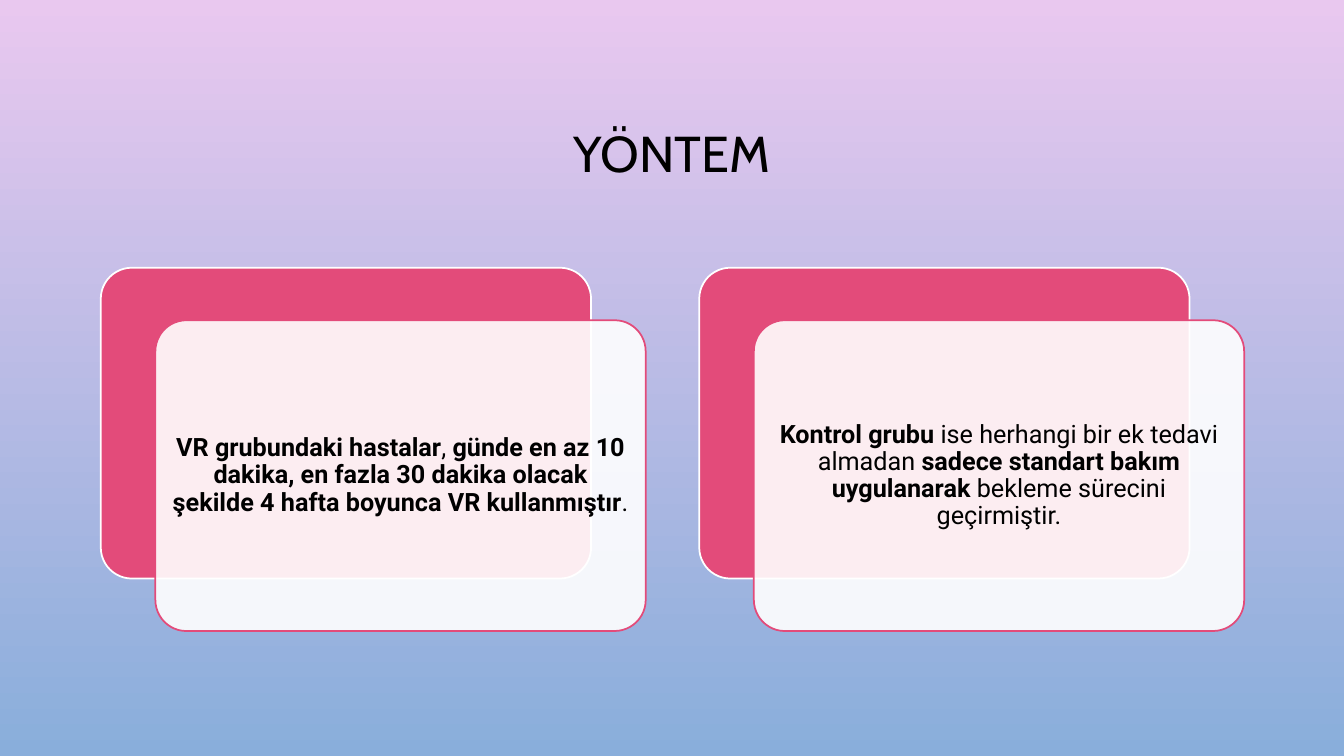
from dataclasses import dataclass

from lxml.etree import SubElement
from pptx import Presentation
from pptx.dml.color import RGBColor
from pptx.enum.shapes import MSO_SHAPE as Preset
from pptx.enum.text import MSO_ANCHOR as Anchor, PP_ALIGN as Align
from pptx.oxml.ns import qn
from pptx.slide import Slide
from pptx.util import Emu, Pt

EMU_PER_PX = 9525
COLORS = {
    "sky_top": "E9C8EF",
    "sky_bottom": "89AEDB",
    "rose": "E34B7A",
    "white": "FFFFFF",
    "ink": "000000",
}
CARD_LEFT, CARD_TOP, CARD_STEP = 96, 255, 570
CARD_WIDTH, CARD_HEIGHT = 467, 296
FRONT_SHIFT_X, FRONT_SHIFT_Y = 52, 50
TEXT_INSET = 9


@dataclass(frozen=True)
class Area:
    left: int
    top: int
    width: int
    height: int

    def emu(self) -> list[Emu]:
        return [px(side) for side in (self.left, self.top, self.width, self.height)]


@dataclass(frozen=True)
class Phrase:
    text: str
    bold: bool = False


@dataclass(frozen=True)
class Panel:
    fill: str
    line: str
    opacity: int = 100


BACK = Panel("rose", "white")
FRONT = Panel("white", "rose", 90)
GROUPS = [
    [
        Phrase("VR grubundaki hastalar", True),
        Phrase(", "),
        Phrase(
            "günde en az 10 dakika, en fazla 30 dakika olacak şekilde "
            "4 hafta boyunca VR kullanmıştır",
            True,
        ),
        Phrase(". "),
    ],
    [
        Phrase("Kontrol grubu", True),
        Phrase(" ise herhangi bir ek tedavi almadan "),
        Phrase("sadece standart bakım uygulanarak", True),
        Phrase(" bekleme sürecini geçirmiştir."),
    ],
]


def px(length: int) -> Emu:
    return Emu(length * EMU_PER_PX)


def color(name: str) -> RGBColor:
    return RGBColor.from_string(COLORS[name])


def paint_background(page: Slide) -> None:
    fill = page.background.fill
    fill.gradient()
    fill.gradient_angle = 270
    for stop, name in zip(fill.gradient_stops, ("sky_top", "sky_bottom")):
        stop.color.rgb = color(name)


def add_panel(page: Slide, area: Area, panel: Panel) -> None:
    box = page.shapes.add_shape(Preset.ROUNDED_RECTANGLE, *area.emu())
    box.adjustments[0] = 0.1
    box.shadow.inherit = False
    box.fill.solid()
    box.fill.fore_color.rgb = color(panel.fill)
    box.line.color.rgb = color(panel.line)
    box.line.width = Pt(1.25)
    if panel.opacity < 100:
        tint = box._element.spPr.find(qn("a:solidFill")).find(qn("a:srgbClr"))
        SubElement(tint, qn("a:alpha")).set("val", str(panel.opacity * 1000))


def add_text(
    page: Slide, area: Area, phrases: list[Phrase], font: str, size: int
) -> None:
    frame = page.shapes.add_textbox(*area.emu()).text_frame
    frame_format = {
        "word_wrap": True,
        "vertical_anchor": Anchor.MIDDLE,
        "margin_left": px(7),
        "margin_right": px(7),
        "margin_top": px(7),
        "margin_bottom": px(7),
    }
    for name, value in frame_format.items():
        setattr(frame, name, value)
    para = frame.paragraphs[0]
    for name, value in {"alignment": Align.CENTER, "line_spacing": 0.9}.items():
        setattr(para, name, value)
    for phrase in phrases:
        span = para.add_run()
        span.text = phrase.text
        span_format = {"name": font, "size": Pt(size), "bold": phrase.bold}
        for name, value in span_format.items():
            setattr(span.font, name, value)
        span.font.color.rgb = color("ink")


def add_card(page: Slide, left: int, phrases: list[Phrase]) -> None:
    back = Area(left, CARD_TOP, CARD_WIDTH, CARD_HEIGHT)
    front = Area(
        left + FRONT_SHIFT_X, CARD_TOP + FRONT_SHIFT_Y, CARD_WIDTH, CARD_HEIGHT
    )
    inner = Area(
        front.left + TEXT_INSET,
        front.top + TEXT_INSET,
        front.width - 2 * TEXT_INSET,
        front.height - 2 * TEXT_INSET,
    )
    add_panel(page, back, BACK)
    add_panel(page, front, FRONT)
    add_text(page, inner, phrases, "Roboto", 18)


def main() -> None:
    deck = Presentation()
    deck.slide_width, deck.slide_height = px(1280), px(720)
    page = deck.slides.add_slide(deck.slide_layouts[6])
    paint_background(page)
    add_text(page, Area(96, 65, 1088, 168), [Phrase("YÖNTEM")], "Cabin", 36)
    for index, phrases in enumerate(GROUPS):
        add_card(page, CARD_LEFT + index * CARD_STEP, phrases)
    deck.save("out.pptx")


if __name__ == "__main__":
    main()
